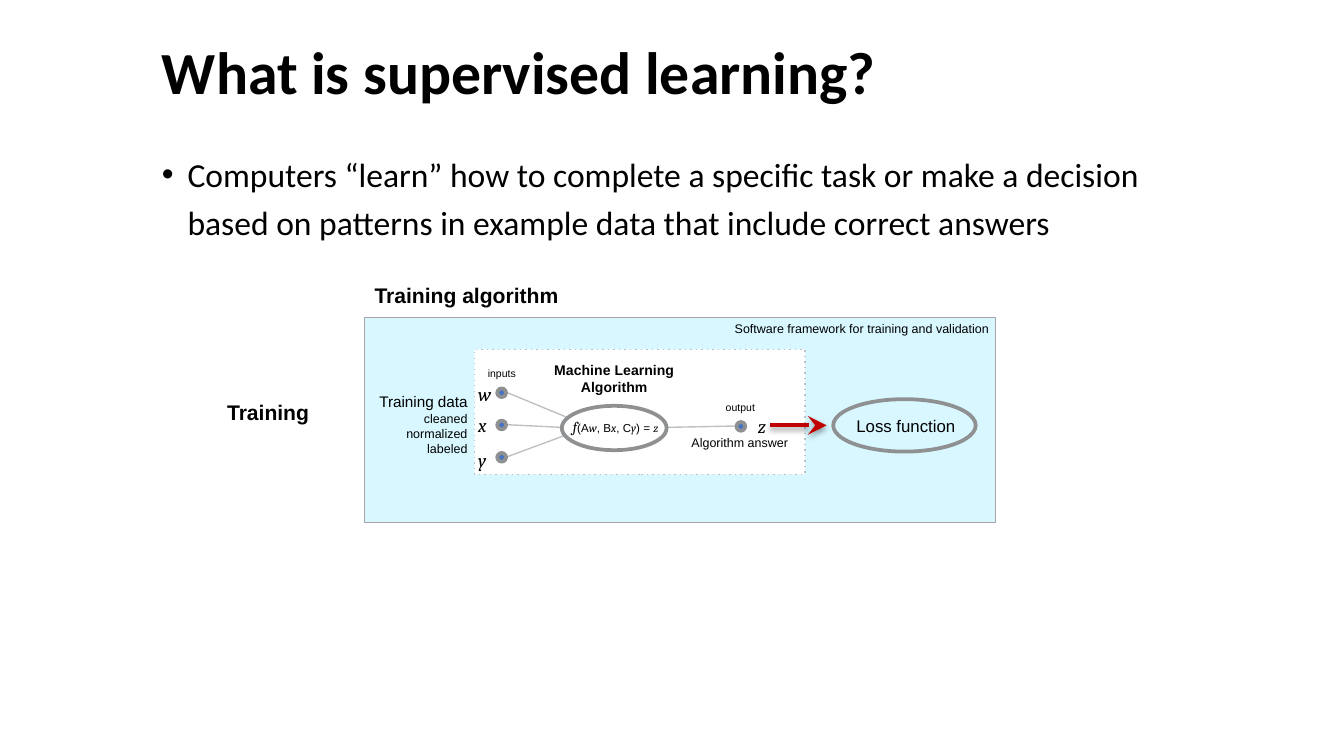
from dataclasses import dataclass

from lxml import etree
from pptx import Presentation
from pptx.dml.color import RGBColor
from pptx.enum.shapes import MSO_CONNECTOR, MSO_SHAPE
from pptx.enum.text import MSO_ANCHOR, MSO_AUTO_SIZE, PP_ALIGN
from pptx.oxml.ns import qn
from pptx.util import Inches, Pt

LEFT, CENTER, RIGHT = PP_ALIGN.LEFT, PP_ALIGN.CENTER, PP_ALIGN.RIGHT
RECTANGLE, OVAL = MSO_SHAPE.RECTANGLE, MSO_SHAPE.OVAL
NODE = MSO_SHAPE.FLOWCHART_CONNECTOR
TITLE_LAYOUT = 1

# The slide is a grid of square cells, 100 columns by 56.25 rows
COLUMNS, ROWS = 100, 56.25
CELL = Inches(10) / COLUMNS


@dataclass(frozen=True)
class Theme:
    text: str = "000000"
    panel: str = "BFF3FF"
    panel_edge: str = "A6A6A6"
    paper: str = "FFFFFF"
    link: str = "BDC1C3"
    ring: str = "8E9091"
    node: str = "4472C4"
    arrow: str = "C00000"
    heading_font: str = "Calibri"
    label_font: str = "Arial"
    math_font: str = "Cambria"
    title: float = 32
    body: float = 18
    heading: float = 11.25
    variable: float = 10.1
    loss: float = 9
    data: float = 8.2
    function: float = 7.9
    algorithm: float = 7.5
    label: float = 6.75
    formula: float = 6.2
    port: float = 5.6


THEME = Theme()


def cells(*lengths):
    return [round(length * CELL) for length in lengths]


def set_all(target, values):
    for name, value in values.items():
        setattr(target, name, value)


def add_child(parent, tag, **attributes):
    return etree.SubElement(parent, qn(tag), attributes)


def add_run(paragraph, text, size, font=THEME.label_font, bold=False, italic=False):
    run = paragraph.add_run()
    run.text = text
    set_all(run.font, {"size": Pt(size), "name": font, "bold": bold, "italic": italic})
    run.font.color.rgb = RGBColor.from_string(THEME.text)


def set_frame(frame, horizontal, vertical, wrap=True):
    set_all(frame, {
        "margin_left": Inches(horizontal), "margin_right": Inches(horizontal),
        "margin_top": Inches(vertical), "margin_bottom": Inches(vertical),
        "vertical_anchor": MSO_ANCHOR.TOP, "word_wrap": wrap,
        "auto_size": MSO_AUTO_SIZE.NONE,
    })


def add_label(shapes, box, lines, align=LEFT, bold=False, insets=(0.06, 0.03)):
    """Add a text box whose lines are (text, size) pairs."""
    frame = shapes.add_textbox(*cells(*box)).text_frame
    set_frame(frame, *insets)
    for index, (text, size) in enumerate(lines):
        paragraph = frame.add_paragraph() if index else frame.paragraphs[0]
        paragraph.alignment = align
        add_run(paragraph, text, size, bold=bold)


def add_math(shapes, box, parts):
    """Add one line of (text, size) parts; single letters are set as variables."""
    frame = shapes.add_textbox(*cells(*box)).text_frame
    set_frame(frame, 0.1, 0.05, wrap=False)
    frame.auto_size = MSO_AUTO_SIZE.SHAPE_TO_FIT_TEXT
    for text, size in parts:
        variable = len(text) == 1
        font = THEME.math_font if variable else THEME.label_font
        add_run(frame.paragraphs[0], text, size, font, italic=variable)


def add_figure(shapes, kind, box, line, width, fill=None):
    figure = shapes.add_shape(kind, *cells(*box))
    figure.shadow.inherit = False
    if fill:
        figure.fill.solid()
        figure.fill.fore_color.rgb = RGBColor.from_string(fill)
    else:
        figure.fill.background()
    figure.line.color.rgb = RGBColor.from_string(line)
    figure.line.width = Pt(width)
    return figure


def add_link(shapes, ends, color=THEME.link, width=0.75):
    link = shapes.add_connector(MSO_CONNECTOR.STRAIGHT, *cells(*ends))
    link.line.color.rgb = RGBColor.from_string(color)
    link.line.width = Pt(width)
    effects = add_child(link._element.spPr, "a:effectLst")
    return link, effects


def add_arrow(shapes, ends):
    arrow, effects = add_link(shapes, ends, THEME.arrow, 2)
    add_child(arrow.line._get_or_add_ln(), "a:tailEnd", type="stealth", w="lg", len="lg")
    shadow = add_child(effects, "a:outerShdw", blurRad=str(Pt(3.1)),
                       dist=str(Pt(1.6)), dir="5400000", rotWithShape="0")
    color = add_child(shadow, "a:srgbClr", val=THEME.text)
    add_child(color, "a:alpha", val="38000")


def fill_placeholder(placeholder, box, text, size, spacing, bold=False, bullet=None):
    places = ("left", "top", "width", "height")
    set_all(placeholder, dict(zip(places, cells(*box))))
    set_frame(placeholder.text_frame, 0, 0)
    paragraph = placeholder.text_frame.paragraphs[0]
    set_all(paragraph, {"alignment": LEFT, "line_spacing": spacing, "space_before": Pt(0)})
    if bullet:
        properties = paragraph._p.get_or_add_pPr()
        indent = Inches(0.19)
        properties.set("marL", str(indent))
        properties.set("indent", str(-indent))
        add_child(properties, "a:buFont", typeface=THEME.label_font)
        add_child(properties, "a:buChar", char=bullet)
    add_run(paragraph, text, size, THEME.heading_font, bold)


def add_panels(shapes):
    panel = add_figure(shapes, RECTANGLE, (27.1, 23.6, 46.95, 15.3),
                       THEME.panel_edge, 0.5, THEME.panel)
    color = panel._element.spPr.find(qn("a:solidFill"))[0]
    add_child(color, "a:alpha", val="60000")
    model = add_figure(shapes, RECTANGLE, (35.3, 26, 24.6, 9.3),
                       THEME.link, 0.75, THEME.paper)
    add_child(model.line._get_or_add_ln(), "a:prstDash", val="dot")


def add_network(shapes):
    # Links run into and out of the function
    for ends in ((37.7, 29.2, 42.3, 31.1), (37.7, 31.6, 41.8, 31.8),
                 (37.7, 34, 42.3, 32.3), (49.6, 31.8, 54.8, 31.7)):
        add_link(shapes, ends)
    # Three input nodes at equal steps, one output node
    nodes = [(37, 28.9 + 2.4 * step) for step in range(3)] + [(54.8, 31.4)]
    for left, top in nodes:
        add_figure(shapes, NODE, (left, top, 0.65, 0.65), THEME.ring, 2, THEME.node)
    for ring, fill in (((41.8, 30.2, 7.8, 3.3), THEME.paper), ((62, 29.7, 10.6, 3.9), None)):
        add_figure(shapes, OVAL, ring, THEME.ring, 2, fill)


def add_math_texts(shapes):
    pieces = ("(A", "w", ", B", "x", ", C", "y", ") = ", "z")
    formula = [("f", THEME.function)] + [(piece, THEME.formula) for piece in pieces]
    add_math(shapes, (41.65, 30.6, 8.8, 2.3), formula)
    for name, left, top, width in (("w", 34.6, 28, 3), ("x", 34.6, 30.3, 2.7),
                                   ("y", 34.6, 32.9, 2.7), ("z", 55.4, 30.4, 2.6)):
        add_math(shapes, (left, top, width, 2.7), [(name, THEME.variable)])


def add_labels(shapes):
    for text, box, align in (("Training", (15.1, 29.3, 8.6, 2.7), RIGHT),
                             ("Training algorithm", (27.1, 20.6, 15.2, 2.7), CENTER)):
        add_label(shapes, box, [(text, THEME.heading)], align, True, (0.07, 0.04))
    for text, box, size, align in (
        ("Algorithm answer", (50.85, 32.1, 9.2, 1.6), THEME.label, LEFT),
        ("inputs", (35.7, 27, 3.4, 1.5), THEME.port, LEFT),
        ("output", (53.4, 29.55, 3.7, 1.5), THEME.port, LEFT),
        ("Loss function", (62.3, 30.6, 10.2, 2.1), THEME.loss, CENTER),
        ("Software framework for training and validation",
         (53.05, 23.6, 21.2, 1.5), THEME.label, RIGHT),
    ):
        add_label(shapes, box, [(text, size)], align)
    qualities = [(word, THEME.label) for word in ("cleaned", "normalized", "labeled")]
    add_label(shapes, (27.4, 28.9, 8, 5.4), [("Training data", THEME.data)] + qualities, RIGHT)
    name = [(word, THEME.algorithm) for word in ("Machine Learning", "Algorithm")]
    add_label(shapes, (39.7, 26.6, 12, 3.4), name, CENTER, True)


def main():
    presentation = Presentation()
    presentation.slide_width, presentation.slide_height = cells(COLUMNS, ROWS)
    slide = presentation.slides.add_slide(presentation.slide_layouts[TITLE_LAYOUT])

    # Title and bullet
    fill_placeholder(slide.shapes.title, (12.05, 3.2, 84.9, 5.4),
                     "What is supervised learning?", THEME.title, 0.9, bold=True)
    fill_placeholder(slide.placeholders[1], (12.05, 10.85, 76.6, 7.9),
                     "Computers “learn” how to complete a specific task or make a decision "
                     "based on patterns in example data that include correct answers",
                     THEME.body, 1.2, bullet="•")

    # Training diagram
    diagram = slide.shapes.add_group_shape().shapes
    for add_part in (add_panels, add_network, add_math_texts, add_labels):
        add_part(diagram)
    add_arrow(slide.shapes, (57.3, 31.65, 61.5, 31.65))

    presentation.save("out.pptx")


if __name__ == "__main__":
    main()
